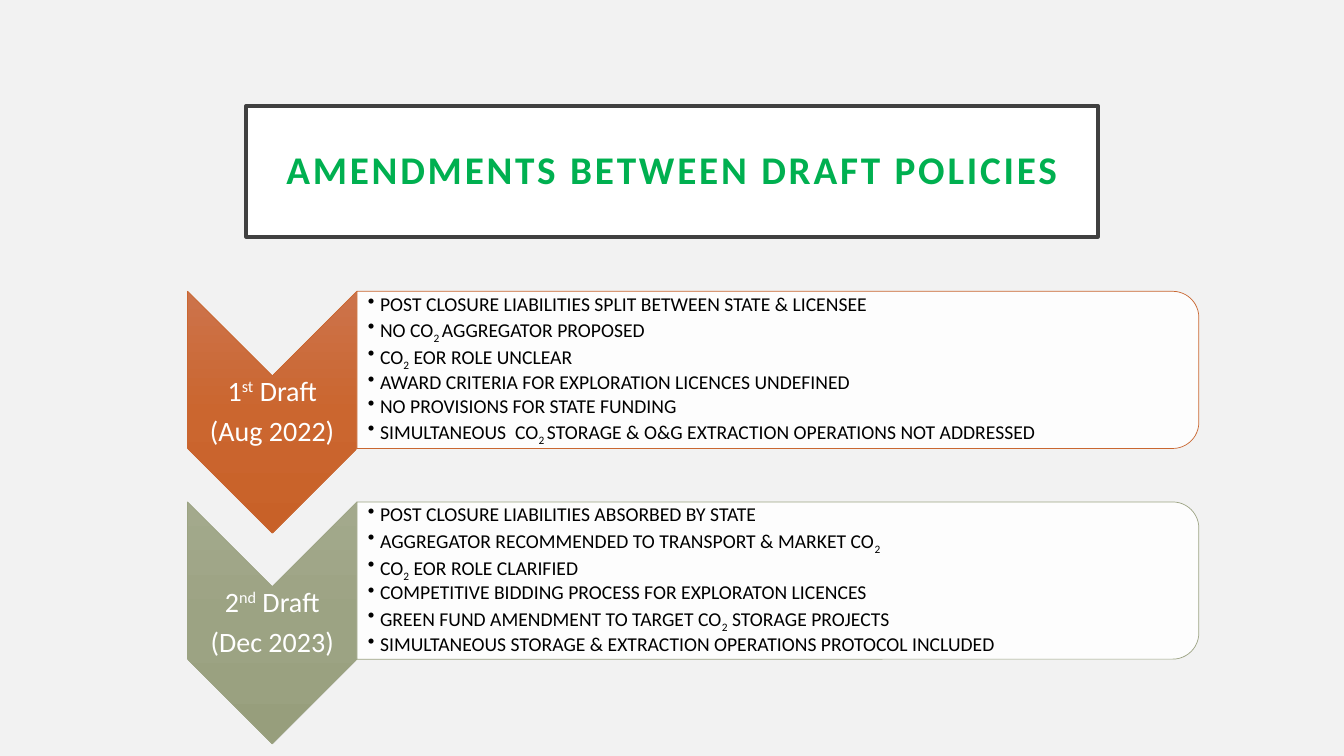
from lxml import etree
from pptx import Presentation
from pptx.dml.color import RGBColor
from pptx.enum.shapes import MSO_SHAPE as Shape
from pptx.enum.text import MSO_ANCHOR as Anchor, PP_ALIGN as Align
from pptx.oxml.ns import qn
from pptx.util import Inches, Pt

WHITE = RGBColor(0xFF, 0xFF, 0xFF)
BLACK = RGBColor(0x00, 0x00, 0x00)
PAGE_GREY = RGBColor(0xF2, 0xF2, 0xF2)
FRAME_GREY = RGBColor(0x40, 0x40, 0x40)
GREEN = RGBColor(0x00, 0xB0, 0x50)
ORANGE = RGBColor(0xC9, 0x67, 0x31)
ORANGE_STOPS = [RGBColor(0xCC, 0x73, 0x4B), RGBColor(0xCB, 0x66, 0x2F), RGBColor(0xC8, 0x61, 0x28)]
SAGE = RGBColor(0x9C, 0xA3, 0x83)
SAGE_STOPS = [RGBColor(0xA3, 0xA9, 0x8C), RGBColor(0x9C, 0xA3, 0x83), RGBColor(0x97, 0x9E, 0x7C)]

SUPERSCRIPT, SUBSCRIPT = 30000, -25000
LEFT, FIRST_TOP, ROW_STEP = 1.86, 2.89, 2.09
ARROW_WIDTH, ARROW_HEIGHT = 1.68, 2.4
PANEL_WIDTH, PANEL_HEIGHT = 8.35, 1.56

# Text between tildes is raised in labels and lowered in points.
DRAFTS = [
    (["1~st~ Draft", "(Aug 2022)"], ORANGE, ORANGE_STOPS, [
        "POST CLOSURE LIABILITIES SPLIT BETWEEN STATE & LICENSEE",
        "NO CO~2 ~AGGREGATOR PROPOSED",
        "CO~2~ EOR ROLE UNCLEAR",
        "AWARD CRITERIA FOR EXPLORATION LICENCES UNDEFINED",
        "NO PROVISIONS FOR STATE FUNDING",
        "SIMULTANEOUS  CO~2 ~STORAGE & O&G EXTRACTION OPERATIONS NOT ADDRESSED",
    ]),
    (["2~nd~ Draft", "(Dec 2023)"], SAGE, SAGE_STOPS, [
        "POST CLOSURE LIABILITIES ABSORBED BY STATE",
        "AGGREGATOR RECOMMENDED TO TRANSPORT & MARKET CO~2~",
        "CO~2~ EOR ROLE CLARIFIED",
        "COMPETITIVE BIDDING PROCESS FOR EXPLORATON LICENCES",
        "GREEN FUND AMENDMENT TO TARGET CO~2~ STORAGE PROJECTS",
        "SIMULTANEOUS STORAGE & EXTRACTION OPERATIONS PROTOCOL INCLUDED",
    ]),
]


class PageBuilder:
    font_name = "Calibri"
    line_spacing = 0.9

    def __init__(self, page):
        self.page = page
        page.background.fill.solid()
        page.background.fill.fore_color.rgb = PAGE_GREY

    def shape(self, kind, left, top, width, height, line_color, line_width):
        shape = self.page.shapes.add_shape(
            kind, Inches(left), Inches(top), Inches(width), Inches(height))
        shape.shadow.inherit = False
        shape.fill.solid()
        shape.fill.fore_color.rgb = WHITE
        shape.line.color.rgb = line_color
        shape.line.width = Pt(line_width)
        return shape

    def turned_shape(self, kind, left, top, width, height, line_color):
        """Add a shape turned by 90 degrees that covers the given area."""
        inset = (width - height) / 2
        shape = self.shape(kind, left + inset, top - inset, height, width, line_color, 0.5)
        shape.rotation = 90
        return shape

    def arrow(self, left, top, line_color, stops):
        arrow = self.turned_shape(Shape.CHEVRON, left, top, ARROW_WIDTH, ARROW_HEIGHT, line_color)
        arrow.fill.gradient()
        gradient = arrow.fill._xPr.find(qn("a:gradFill"))
        gradient.set("rotWithShape", "0")
        gradient.find(qn("a:lin")).set("ang", "5400000")
        stop_list = gradient.find(qn("a:gsLst"))
        for stop in list(stop_list):
            stop_list.remove(stop)
        for place, color in zip((0, 50000, 100000), stops):
            stop = etree.SubElement(stop_list, qn("a:gs"), pos=str(place))
            etree.SubElement(stop, qn("a:srgbClr"), val=str(color))

    def panel(self, left, top, line_color):
        panel = self.turned_shape(Shape.ROUND_2_SAME_RECTANGLE, left, top,
                                  PANEL_WIDTH, PANEL_HEIGHT, line_color)
        color = panel.fill._xPr.find(qn("a:solidFill"))[0]
        etree.SubElement(color, qn("a:alpha"), val="90000")

    def title(self, text):
        box = self.shape(Shape.RECTANGLE, 2.44, 1.05, 8.45, 1.3, FRAME_GREY, 2.5)
        self.fill_frame(box.text_frame, [text], 28, GREEN, inset=0.2, left_inset=0.2)
        span = box.text_frame.paragraphs[0].runs[0]
        span.font.bold = True
        span.font._element.set("spc", "200")

    def text(self, left, top, width, height, lines, size, color, **style):
        box = self.page.shapes.add_textbox(
            Inches(left), Inches(top), Inches(width), Inches(height))
        self.fill_frame(box.text_frame, lines, size, color, **style)

    def fill_frame(self, frame, lines, size, color, inset=0.01, left_inset=0.01,
                   space_after=0, shift=0, bullets=False):
        frame.word_wrap = True
        frame.vertical_anchor = Anchor.MIDDLE
        frame.margin_left = Inches(left_inset)
        frame.margin_top = frame.margin_right = frame.margin_bottom = Inches(inset)
        for index, line in enumerate(lines):
            para = frame.add_paragraph() if index else frame.paragraphs[0]
            para.alignment = Align.LEFT if bullets else Align.CENTER
            para.line_spacing = self.line_spacing
            para.space_after = Pt(space_after)
            if bullets:
                self.bullet(para)
            for part, words in enumerate(line.split("~")):
                if words:
                    self.span(para, words, size, color, shift if part % 2 else 0)

    def bullet(self, para):
        properties = para._p.get_or_add_pPr()
        properties.set("marL", str(Inches(0.12)))
        properties.set("indent", str(-Inches(0.12)))
        etree.SubElement(properties, qn("a:buChar"), char="•")

    def span(self, para, words, size, color, shift):
        span = para.add_run()
        span.text = words
        span.font.name = self.font_name
        span.font.size = Pt(size)
        span.font.color.rgb = color
        if shift:
            span.font._element.set("baseline", str(shift))


def main():
    deck = Presentation()
    deck.slide_width, deck.slide_height = Inches(13.33), Inches(7.5)
    builder = PageBuilder(deck.slides.add_slide(deck.slide_layouts[6]))
    builder.title("AMENDMENTS BETWEEN DRAFT POLICIES")
    panel_left = LEFT + ARROW_WIDTH
    for row, (label, color, stops, points) in enumerate(DRAFTS):
        top = FIRST_TOP + row * ROW_STEP
        builder.arrow(LEFT, top, color, stops)
        builder.text(LEFT, top + 0.84, ARROW_WIDTH, 0.72, label, 20, WHITE,
                     space_after=7, shift=SUPERSCRIPT)
        builder.panel(panel_left, top, color)
        builder.text(panel_left, top + 0.07, 8.27, 1.41, points, 14, BLACK, left_inset=0.11,
                     space_after=2.1, shift=SUBSCRIPT, bullets=True)
    deck.save("out.pptx")


if __name__ == "__main__":
    main()
